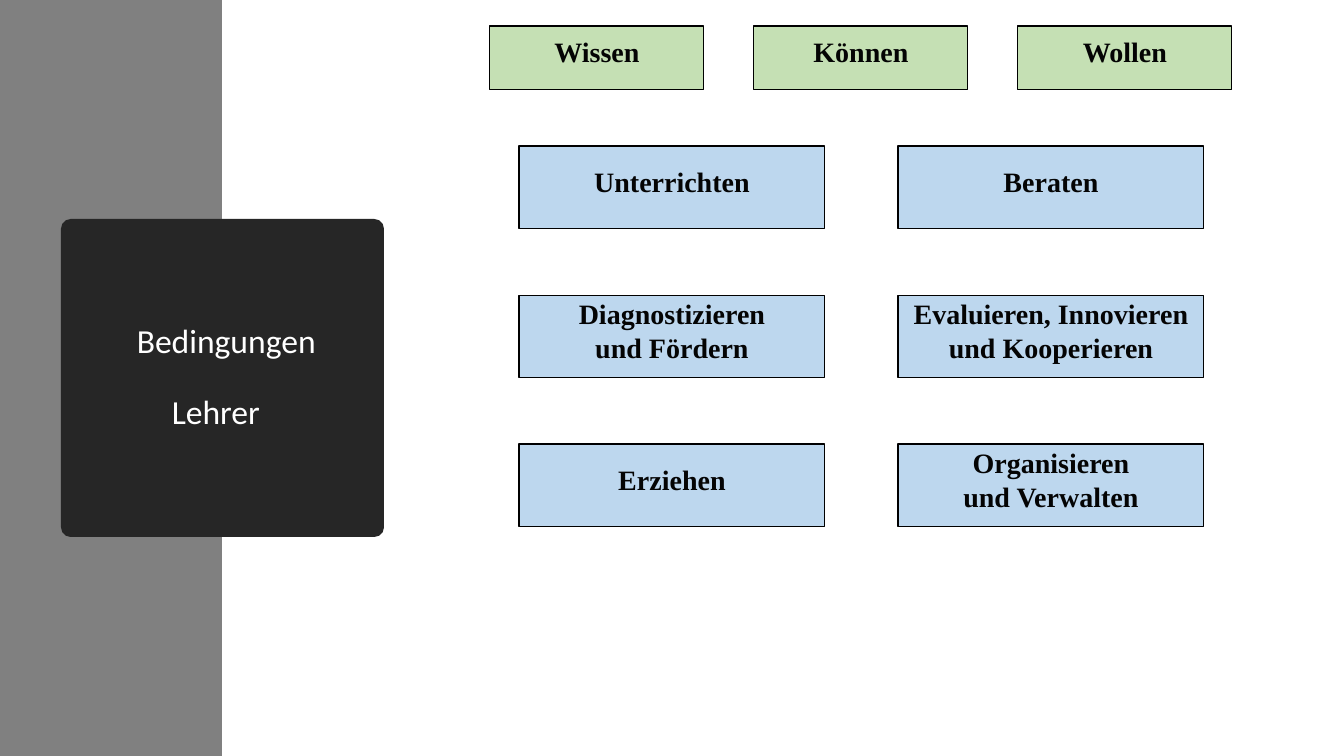
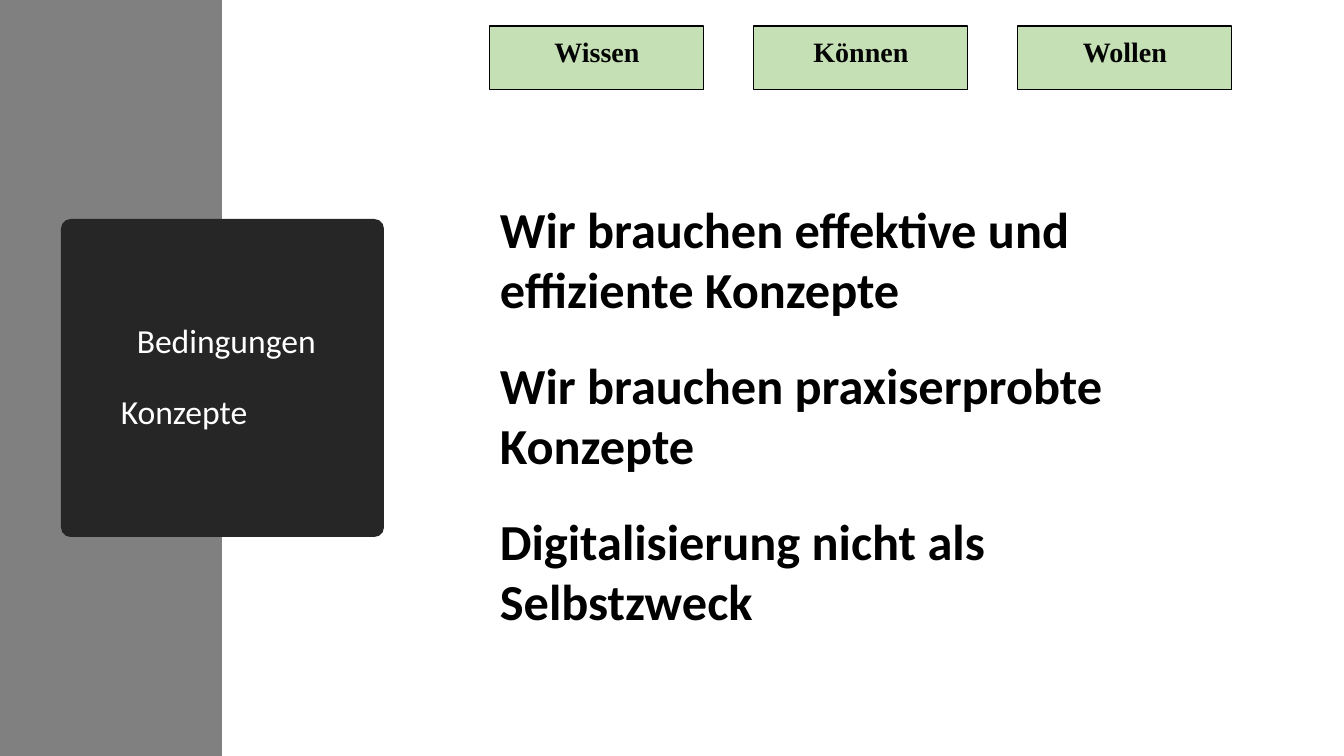
"""Build two slides on the conditions of teaching: teachers and concepts."""
import pptx
import pptx.util
import pptx.dml.color
import pptx.enum.shapes
import pptx.enum.text

RGB = pptx.dml.color.RGBColor
GREY = RGB(0x80, 0x80, 0x80)
DARK = RGB(0x26, 0x26, 0x26)
GREEN = RGB(0xC5, 0xE0, 0xB4)
BLUE = RGB(0xBD, 0xD7, 0xEE)
BLACK = RGB(0, 0, 0)
INK = RGB(4, 4, 4)
WHITE = RGB(255, 255, 255)

TITLE = {"name": "Calibri", "size": pptx.util.Pt(24), "color": WHITE}
LABEL = {"name": "Times New Roman", "size": pptx.util.Pt(20), "bold": True, "color": INK}
CLAIM = {"name": "Calibri", "size": pptx.util.Pt(36), "bold": True, "color": BLACK}

TRAITS = ["Wissen", "Können", "Wollen"]
TASKS = [
    ("Unterrichten", "Beraten"),
    ("Diagnostizieren\nund Fördern", "Evaluieren, Innovieren\nund Kooperieren"),
    ("Erziehen", "Organisieren\nund Verwalten"),
]
CLAIMS = [
    "Wir brauchen effektive und effiziente Konzepte",
    "Wir brauchen praxiserprobte Konzepte",
    "Digitalisierung nicht als Selbstzweck",
]
SLIDES = [
    {"topic": "Lehrer", "indent": 108, "tasks": TASKS, "claims": []},
    {"topic": "Konzepte", "indent": 57, "tasks": [], "claims": CLAIMS},
]

WIDE, HIGH = 1344, 756
SCALE = 12192000 / WIDE
KIND = pptx.enum.shapes.MSO_SHAPE
ALIGN = pptx.enum.text.PP_ALIGN
MIDDLE = pptx.enum.text.MSO_ANCHOR.MIDDLE


def px(n):
    return pptx.util.Emu(round(n * SCALE))


def style(para, look):
    for key, value in look.items():
        if key == "color":
            para.font.color.rgb = value
        else:
            setattr(para.font, key, value)


def block(slide, area, fill, kind=KIND.RECTANGLE):
    shape = slide.shapes.add_shape(kind, *map(px, area))
    shape.shadow.inherit = False
    shape.fill.solid()
    shape.fill.fore_color.rgb = fill
    shape.line.fill.background()
    return shape


def write(frame, lines, look, align):
    frame.text = "\n".join(lines)
    for para in frame.paragraphs:
        para.alignment = align
        style(para, look)


def label(slide, area, fill, text):
    shape = block(slide, area, fill)
    shape.line.color.rgb = BLACK
    shape.line.width = pptx.util.Pt(0.75)
    frame = shape.text_frame
    frame.word_wrap = False
    frame.vertical_anchor = MIDDLE
    frame.margin_top, frame.margin_bottom = 0, px(13)
    write(frame, text.split("\n"), LABEL, ALIGN.CENTER)


def base(slide, topic, indent):
    block(slide, (0, 0, 222, HIGH), GREY)
    panel = block(slide, (61, 219, 323, 318), DARK, KIND.ROUNDED_RECTANGLE)
    panel.adjustments[0] = 0.03
    frame = panel.text_frame
    frame.vertical_anchor = MIDDLE
    frame.margin_left = frame.margin_right = 0
    write(frame, ["Bedingungen", topic], TITLE, ALIGN.LEFT)
    for para, left in zip(frame.paragraphs, (73, indent)):
        para.line_spacing = 0.9
        para._p.get_or_add_pPr().set("marL", str(px(left)))
    frame.paragraphs[1].space_before = pptx.util.Pt(25)
    for col, text in enumerate(TRAITS):
        label(slide, (490 + 264 * col, 26, 214, 64), GREEN, text)


def main():
    deck = pptx.Presentation()
    deck.slide_width, deck.slide_height = px(WIDE), px(HIGH)
    for page in SLIDES:
        slide = deck.slides.add_slide(deck.slide_layouts[6])
        base(slide, page["topic"], page["indent"])
        for row, pair in enumerate(page["tasks"]):
            for col, text in enumerate(pair):
                label(slide, (519 + 379 * col, 146 + 149 * row, 306, 83), BLUE, text)
        for row, text in enumerate(page["claims"]):
            box = slide.shapes.add_textbox(*map(px, (490, 193 + 156 * row, 719, 132)))
            box.text_frame.word_wrap = True
            write(box.text_frame, [text], CLAIM, ALIGN.LEFT)
    deck.save("out.pptx")


if __name__ == "__main__":
    main()
